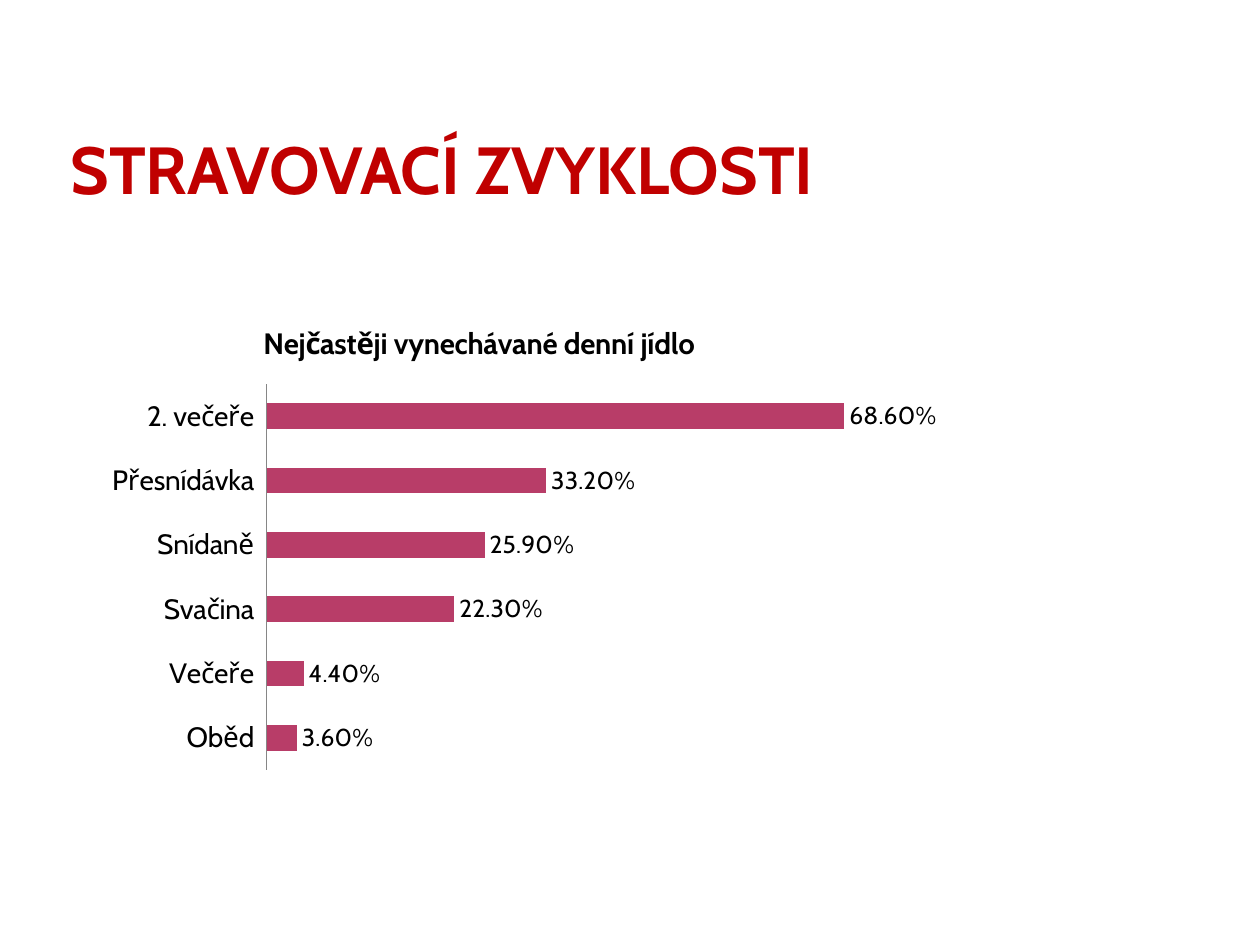
from lxml import etree
from pptx import Presentation
from pptx.chart.data import CategoryChartData
from pptx.dml.color import RGBColor
from pptx.enum.chart import (XL_CHART_TYPE, XL_LABEL_POSITION, XL_TICK_LABEL_POSITION,
                             XL_TICK_MARK)
from pptx.enum.text import MSO_ANCHOR
from pptx.oxml import parse_xml
from pptx.oxml.ns import nsdecls, qn
from pptx.util import Inches, Pt

BAR = XL_CHART_TYPE.BAR_CLUSTERED
OUTSIDE = XL_LABEL_POSITION.OUTSIDE_END
LOW = XL_TICK_LABEL_POSITION.LOW
NO_TICK = XL_TICK_MARK.NONE
BOTTOM = MSO_ANCHOR.BOTTOM

FONT = "Cabin"
COLORS = {"heading": "C00000", "text": "000000", "bar": "B83D68", "axis": "868686"}
PERCENT = "0.00%"
SKIPPED_MEALS = {
    "Oběd": 0.036,
    "Večeře": 0.044,
    "Svačina": 0.223,
    "Snídaně": 0.259,
    "Přesnídávka": 0.332,
    "2. večeře": 0.686,
}
PAGE_WIDTH, PAGE_HEIGHT = Inches(10), Inches(7.5)


def share_box(left, top, width, height):
    """Turn shares of the page into left, top, width and height."""
    return [int(share * side) for share, side in
            zip((left, top, width, height), (PAGE_WIDTH, PAGE_HEIGHT) * 2)]


def color(name):
    return RGBColor.from_string(COLORS[name])


def style_font(font, size, color_name="text", bold=False):
    font.name = FONT
    font.size = Pt(size)
    font.bold = bold
    font.color.rgb = color(color_name)


def manual_layout(**shares):
    """Build a chart layout element from x, y and, for a plot, w and h."""
    layout = parse_xml(f"<c:layout {nsdecls('c')}><c:manualLayout/></c:layout>")
    settings = {"layoutTarget": "inner"} if "w" in shares else {}
    settings.update(xMode="edge", yMode="edge", **shares)
    for tag, value in settings.items():
        etree.SubElement(layout[0], qn(f"c:{tag}")).set("val", str(value))
    return layout


def replace_layout(parent, layout, position):
    for old in parent.findall(qn("c:layout")):
        parent.remove(old)
    parent.insert(position, layout)


def add_heading(page, box, text):
    frame = page.shapes.add_textbox(*box).text_frame
    frame.word_wrap = True
    frame.vertical_anchor = BOTTOM
    frame.margin_left = frame.margin_right = Inches(0.05)
    frame.margin_top = frame.margin_bottom = 0
    para = frame.paragraphs[0]
    para.text = text
    style_font(para.font, 38, "heading", bold=True)


def add_meal_chart(page, box, title, meals):
    data = CategoryChartData(number_format=PERCENT)
    data.categories = list(meals)
    data.add_series("Series 1", list(meals.values()))
    chart = page.shapes.add_chart(BAR, *box, data).chart
    chart.has_legend = False
    style_font(chart.font, 14)

    chart.has_title = True
    para = chart.chart_title.text_frame.paragraphs[0]
    para.text = title
    style_font(para.font, 16.8, bold=True)
    chart.chart_title.include_in_layout = False
    title_element = chart._chartSpace.chart.find(qn("c:title"))
    replace_layout(title_element, manual_layout(x=0.18, y=0.03), 1)
    replace_layout(chart._chartSpace.chart.plotArea,
                   manual_layout(x=0.19, y=0.17, w=0.79, h=0.81), 0)

    meal_axis = chart.category_axis
    meal_axis.major_tick_mark = meal_axis.minor_tick_mark = NO_TICK
    meal_axis.tick_label_position = LOW
    meal_axis.format.line.color.rgb = color("axis")
    style_font(meal_axis.tick_labels.font, 16)

    value_axis = chart.value_axis
    value_axis.minimum_scale, value_axis.maximum_scale = 0, 0.8
    value_axis.has_major_gridlines = False
    value_axis.visible = False

    plot = chart.plots[0]
    plot.gap_width = 150
    plot.overlap = -25
    plot.vary_by_categories = False
    fill = plot.series[0].format.fill
    fill.solid()
    fill.fore_color.rgb = color("bar")

    plot.has_data_labels = True
    labels = plot.data_labels
    labels.show_value = True
    labels.number_format = PERCENT
    labels.number_format_is_linked = False
    labels.position = OUTSIDE
    style_font(labels.font, 14)


def main():
    deck = Presentation()
    deck.slide_width, deck.slide_height = PAGE_WIDTH, PAGE_HEIGHT
    page = deck.slides.add_slide(deck.slide_layouts[6])
    add_heading(page, share_box(0.051, 0.045, 0.85, 0.175), "STRAVOVACÍ ZVYKLOSTI")
    add_meal_chart(page, share_box(0.083, 0.321, 0.677, 0.504),
                   "Nejčastěji vynechávané denní jídlo", SKIPPED_MEALS)
    deck.save("out.pptx")


if __name__ == "__main__":
    main()
